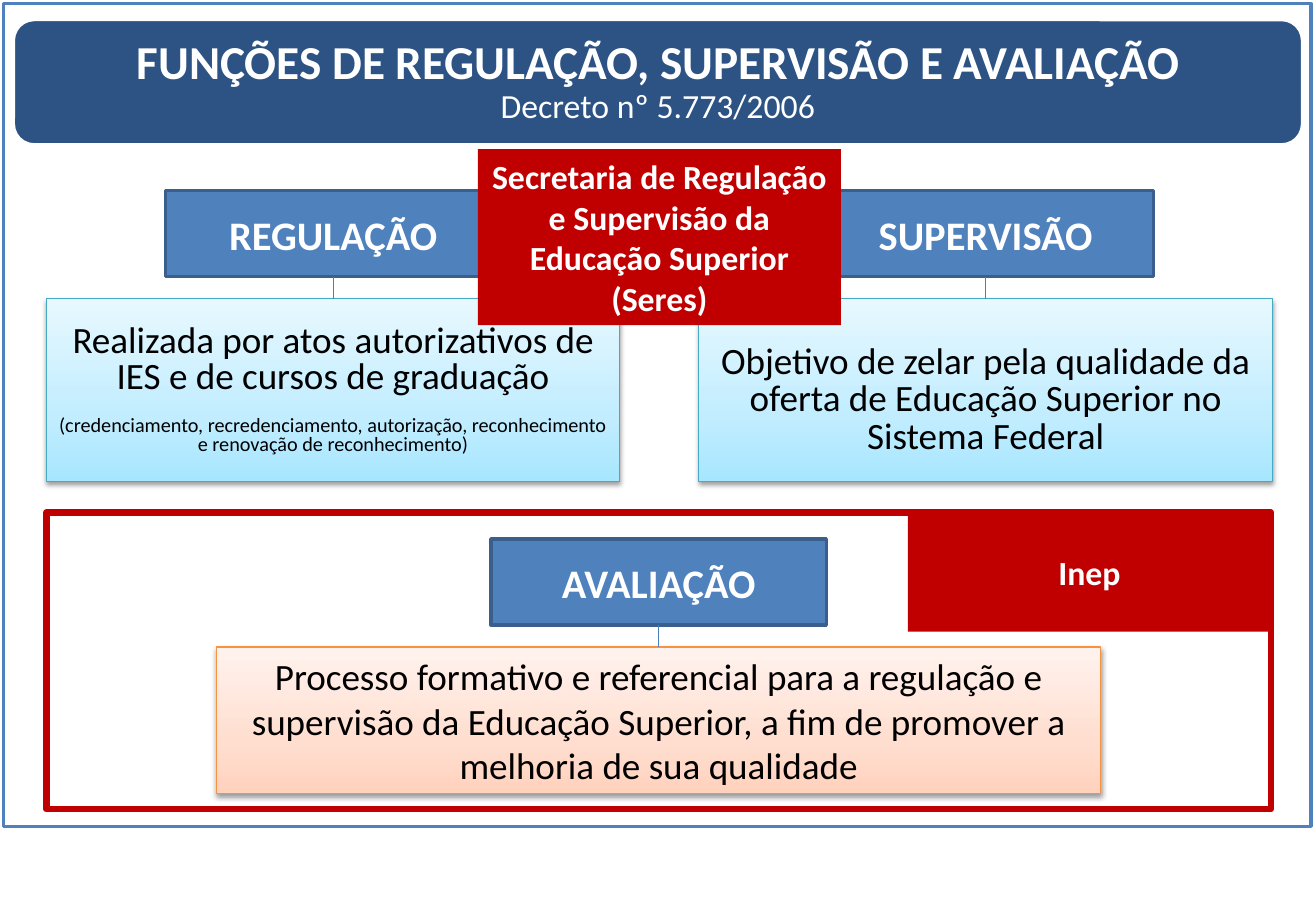
from pptx import Presentation
from pptx.dml.color import RGBColor
from pptx.enum.shapes import MSO_CONNECTOR, MSO_SHAPE
from pptx.enum.text import MSO_ANCHOR, PP_ALIGN
from pptx.oxml.ns import qn
from pptx.oxml.xmlchemy import OxmlElement
from pptx.util import Cm, Pt
from copy import deepcopy

COLORS = {
    "white": "FFFFFF", "black": "000000", "navy": "1F497D",
    "blue": "4F81BD", "dark_blue": "3A5F8C", "connector": "4B7EBC",
    "red": "C00000", "aqua_line": "46AAC5", "orange_line": "F69240",
}
AQUA = ("A7E6FF", "C1EDFF", "E7F8FF")
ORANGE = ("FFD2BD", "FFDED0", "FFF2ED")
STOP_POSITIONS = (0, 0.35, 1)

TITLE_WIDTH, TITLE_HEIGHT = 7.01, 1.8
TITLE_GAP = 0.46
TAG_WIDTH = 7.59


def color(name):
    return RGBColor.from_string(COLORS[name])


def add_box(slide, box, fill=None, line=None, line_width=2, kind=MSO_SHAPE.RECTANGLE):
    shape = slide.shapes.add_shape(kind, *(Cm(length) for length in box))
    shape.shadow.inherit = False
    if fill:
        shape.fill.solid()
        shape.fill.fore_color.rgb = color(fill)
    else:
        shape.fill.background()
    if line:
        shape.line.color.rgb = color(line)
        shape.line.width = Pt(line_width)
    else:
        shape.line.fill.background()
    return shape


def write(shape, paragraphs, font_color, wrap=True):
    """Fill a shape with centred paragraphs: (text, size, bold, line spacing, space before)."""
    frame = shape.text_frame
    frame.word_wrap = wrap
    frame.vertical_anchor = MSO_ANCHOR.MIDDLE
    for index, (text, size, bold, spacing, before) in enumerate(paragraphs):
        paragraph = frame.paragraphs[0] if index == 0 else frame.add_paragraph()
        paragraph.alignment = PP_ALIGN.CENTER
        paragraph.line_spacing = spacing
        paragraph.space_before = Pt(before)
        run = paragraph.add_run()
        run.text = text
        run.font.name = "Calibri"
        run.font.size = Pt(size)
        run.font.bold = bold
        run.font.color.rgb = color(font_color)


def add_alpha(color_element, percent):
    alpha = OxmlElement("a:alpha")
    alpha.set("val", str(percent * 1000))
    color_element.append(alpha)


def set_gradient(shape, stop_colors):
    """Shade from the first colour at the bottom to the last at the top."""
    shape.fill.gradient()
    shape.fill.gradient_angle = 90
    stop_list = shape._element.spPr.find(qn("a:gradFill")).find(qn("a:gsLst"))
    stop_list.insert(1, deepcopy(stop_list[0]))
    for stop, position, value in zip(shape.fill.gradient_stops, STOP_POSITIONS, stop_colors):
        stop.position = position
        stop.color.rgb = RGBColor.from_string(value)


def add_shadow(shape):
    shadow = OxmlElement("a:outerShdw")
    for name, value in (("blurRad", Pt(3.1)), ("dist", Pt(1.6)), ("dir", 5400000), ("rotWithShape", 0)):
        shadow.set(name, str(int(value)))
    shadow_color = OxmlElement("a:srgbClr")
    shadow_color.set("val", COLORS["black"])
    add_alpha(shadow_color, 38)
    shadow.append(shadow_color)
    shape._element.spPr.find(qn("a:effectLst")).append(shadow)


def add_header(slide, box):
    header = add_box(slide, box, "navy", "white", kind=MSO_SHAPE.ROUNDED_RECTANGLE)
    add_alpha(header._element.spPr.find(qn("a:solidFill"))[0], 94)
    write(header, [
        ("FUNÇÕES DE REGULAÇÃO, SUPERVISÃO E AVALIAÇÃO", 28, True, 0.9, 0),
        ("Decreto nº 5.773/2006", 20, False, 0.9, 0),
    ], "white")


def add_function_block(slide, box, title, paragraphs, gradient, line, top_inset=0.13):
    """Place a title centred above a shaded card and join the two."""
    left, top, width, height = box
    center = left + width / 2
    title_bottom = top + TITLE_HEIGHT
    card_top = title_bottom + TITLE_GAP

    title_box = add_box(slide, (center - TITLE_WIDTH / 2, top, TITLE_WIDTH, TITLE_HEIGHT),
                        "blue", "dark_blue")
    write(title_box, [(title, 24, True, 1, 0)], "white", wrap=False)

    card = add_box(slide, (left, card_top, width, top + height - card_top),
                   line=line, line_width=0.75)
    set_gradient(card, gradient)
    add_shadow(card)
    card.text_frame.margin_top = Cm(top_inset)
    write(card, paragraphs, "black")

    connector = slide.shapes.add_connector(
        MSO_CONNECTOR.STRAIGHT, Cm(center), Cm(title_bottom), Cm(center), Cm(card_top))
    connector.line.color.rgb = color("connector")
    connector.line.width = Pt(0.75)
    connector._element.spPr.append(OxmlElement("a:effectLst"))


def add_tag(slide, box, text):
    write(add_box(slide, box, "red"), [(text, 20, True, 1, 0)], "white")


def add_regulation_and_supervision(slide, box):
    left, top, width, height = box
    card_width = 11.99
    add_function_block(slide, (left, top, card_width, height), "REGULAÇÃO", [
        ("Realizada por atos autorizativos de IES e de cursos de graduação", 22, False, 0.8, 0),
        ("(credenciamento, recredenciamento, autorização, reconhecimento "
         "e renovação de reconhecimento)", 12, False, 0.8, 12),
    ], AQUA, "aqua_line")
    add_function_block(slide, (left + width - card_width, top, card_width, height), "SUPERVISÃO", [
        ("Objetivo de zelar pela qualidade da oferta de Educação Superior "
         "no Sistema Federal", 22, False, 0.85, 0),
    ], AQUA, "aqua_line", top_inset=0.56)
    add_tag(slide, (left + (width - TAG_WIDTH) / 2, top - 0.87, TAG_WIDTH, 3.68),
            "Secretaria de Regulação e Supervisão da Educação Superior (Seres)")


def add_evaluation(slide, box):
    left, top, width, height = box
    card_width = 18.49
    add_box(slide, box, line="red", line_width=4)
    add_function_block(slide, (left + (width - card_width) / 2, top + 0.55, card_width, 5.32),
                       "AVALIAÇÃO", [
        ("Processo formativo e referencial para a regulação e supervisão da Educação "
         "Superior, a fim de promover a melhoria de sua qualidade", 22, False, 1, 0),
    ], ORANGE, "orange_line")
    add_tag(slide, (left + width - TAG_WIDTH, top, TAG_WIDTH, 2.49), "Inep")


def main():
    presentation = Presentation()
    presentation.slide_width, presentation.slide_height = Cm(27.51), Cm(19.05)
    slide = presentation.slides.add_slide(presentation.slide_layouts[6])
    add_box(slide, (0.08, 0.08, 27.33, 17.2), "white", "blue")
    add_header(slide, (0.28, 0.41, 26.95, 2.62))
    add_regulation_and_supervision(slide, (0.97, 3.99, 25.63, 6.08))
    add_evaluation(slide, (0.97, 10.72, 25.6, 6.2))
    presentation.save("out.pptx")


if __name__ == "__main__":
    main()
